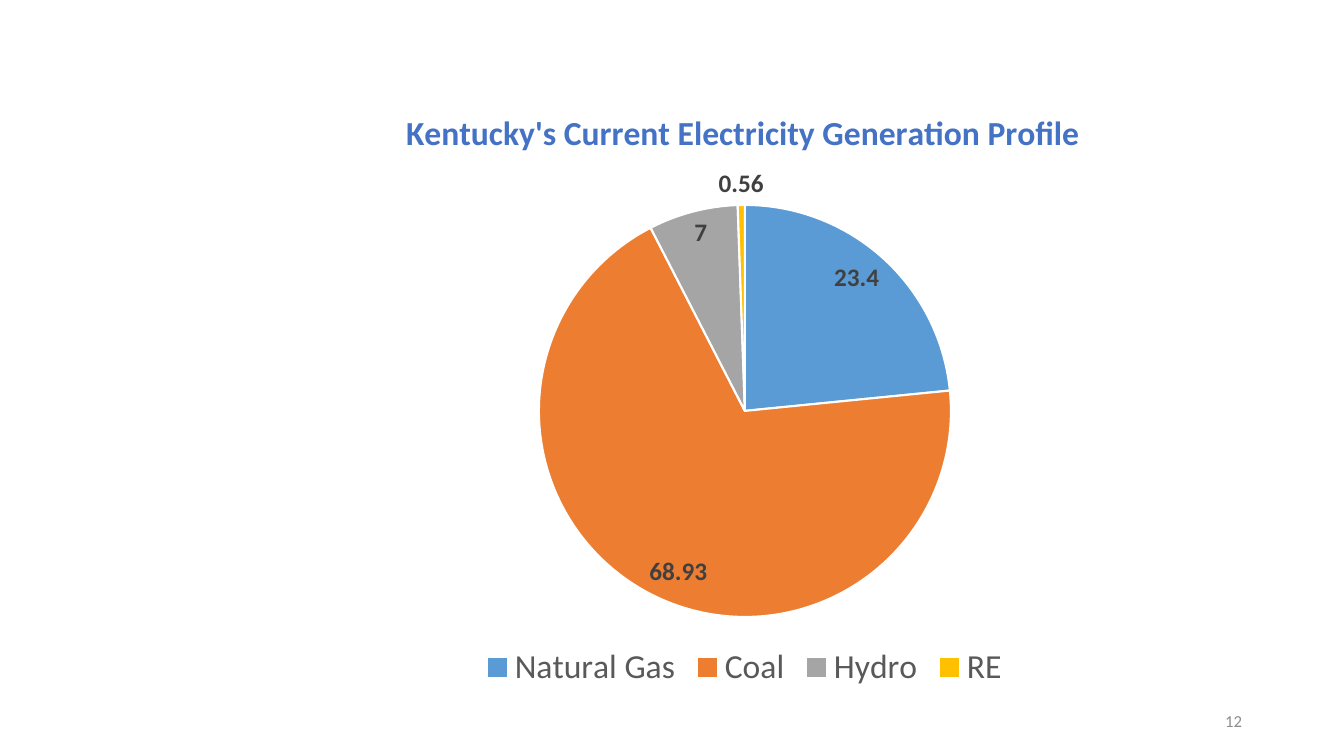
import pptx
import pptx.chart.data
import pptx.dml.color
import pptx.enum.chart
import pptx.enum.text
import pptx.oxml
import pptx.util

PX = 914400 / 100.8
CHART_LEFT, CHART_TOP, CHART_WIDTH, CHART_HEIGHT = 262, 77, 965, 618


def px(*lengths):
    return [pptx.util.Emu(round(length * PX)) for length in lengths]


def style(font, color, **values):
    font.color.rgb = pptx.dml.color.RGBColor.from_string(color)
    for name, value in {"name": "Calibri", **values}.items():
        setattr(font, name, value)


presentation = pptx.Presentation()
presentation.slide_width, presentation.slide_height = px(1344, 756)
slide = presentation.slides.add_slide(presentation.slide_layouts[6])

page_number = slide.shapes.add_textbox(*px(950, 701, 302, 40))
page_frame = page_number.text_frame
page_frame.word_wrap = True
page_frame.vertical_anchor = pptx.enum.text.MSO_ANCHOR.MIDDLE
paragraph = page_frame.paragraphs[0]
paragraph.alignment = pptx.enum.text.PP_ALIGN.RIGHT
run = paragraph.add_run()
run.text = "12"
style(run.font, "8C8C8C", size=pptx.util.Pt(12))

sources = [
    ("Natural Gas", 23.4, "5B9BD5"),
    ("Coal", 68.93, "ED7D31"),
    ("Hydro", 7, "A5A5A5"),
    ("RE", 0.56, "FFC000"),
]
chart_data = pptx.chart.data.CategoryChartData()
chart_data.categories = [name for name, value, color in sources]
chart_data.add_series("Series 1", [value for name, value, color in sources])
chart = slide.shapes.add_chart(
    pptx.enum.chart.XL_CHART_TYPE.PIE,
    *px(CHART_LEFT, CHART_TOP, CHART_WIDTH, CHART_HEIGHT),
    chart_data,
).chart
style(chart.font, "000000", size=pptx.util.Pt(10))

chart.has_title = True
title_frame = chart.chart_title.text_frame
title_frame.text = "Kentucky's Current Electricity Generation Profile"
style(title_frame.paragraphs[0].runs[0].font, "4472C4", size=pptx.util.Pt(24), bold=True)
chart.chart_title.include_in_layout = False

chart.has_legend = True
chart.legend.position = pptx.enum.chart.XL_LEGEND_POSITION.BOTTOM
chart.legend.include_in_layout = False
style(chart.legend.font, "595959", size=pptx.util.Pt(24))

plot = chart.plots[0]
plot.vary_by_categories = True
series = plot.series[0]
label_format = {"size": pptx.util.Pt(18), "bold": True}
labels = series.data_labels
labels.show_value = True
labels.position = pptx.enum.chart.XL_LABEL_POSITION.INSIDE_END
style(labels.font, "404040", **label_format)
renewable_label = series.points[3].data_label
style(renewable_label.font, "404040", **label_format)
renewable_label.position = pptx.enum.chart.XL_LABEL_POSITION.OUTSIDE_END

for index, (name, value, color) in enumerate(sources):
    point_format = series.points[index].format
    point_format.fill.solid()
    point_format.fill.fore_color.rgb = pptx.dml.color.RGBColor.from_string(color)
    point_format.line.color.rgb = pptx.dml.color.RGBColor.from_string("FFFFFF")
    point_format.line.width = pptx.util.Pt(1.5)

title_place = {"x": (400 - CHART_LEFT) / CHART_WIDTH, "y": (104 - CHART_TOP) / CHART_HEIGHT}
pie_place = {
    "x": (539 - CHART_LEFT) / CHART_WIDTH,
    "y": (205 - CHART_TOP) / CHART_HEIGHT,
    "w": 412 / CHART_WIDTH,
    "h": 412 / CHART_HEIGHT,
}
chart_element = chart.element.chart
for parent, place, target in [
    (chart_element.find("{*}title"), title_place, ""),
    (chart_element.plotArea, pie_place, '<c:layoutTarget val="inner"/>'),
]:
    modes = "".join(f'<c:{key}Mode val="edge"/>' for key in "xy")
    sizes = "".join(f'<c:{key} val="{value:.3f}"/>' for key, value in place.items())
    layout = pptx.oxml.parse_xml(
        '<c:layout xmlns:c="http://schemas.openxmlformats.org/drawingml/2006/chart">'
        f"<c:manualLayout>{target}{modes}{sizes}</c:manualLayout></c:layout>"
    )
    for old_layout in parent.findall("{*}layout"):
        parent.remove(old_layout)
    text = parent.find("{*}tx")
    parent.insert(0 if text is None else 1, layout)

presentation.save("out.pptx")
